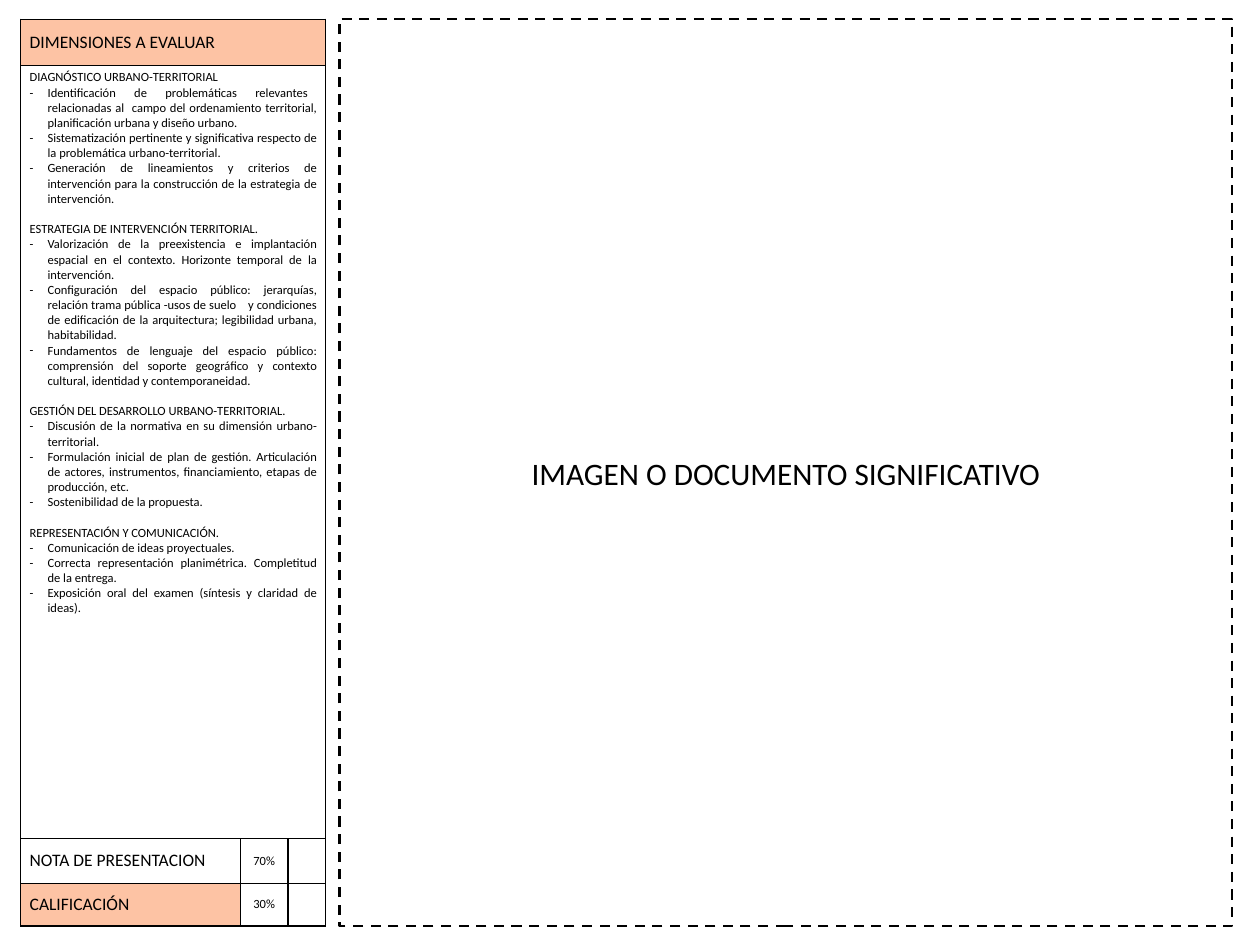
from lxml import etree
from pptx import Presentation
from pptx import util as u
from pptx.dml.color import RGBColor
from pptx.enum import dml, shapes, text
from pptx.oxml.ns import qn

BLACK = RGBColor(0x00, 0x00, 0x00)
WHITE = RGBColor(0xFF, 0xFF, 0xFF)
PEACH = RGBColor(0xFD, 0xC3, 0xA4)
FONT = "Calibri"

WIDTH, HEIGHT = u.Inches(14), u.Inches(10.5)
TOP, TALL = 2, 96
TABLE_LEFT, FRAME_LEFT, FRAME_WIDE = 1.64, 26.93, 70.86
COLUMNS = [17.43, 3.79, 3]
ROWS = [4.95, 81.81, 4.67, 4.57]
VERTICAL_RULES = [1, 0.5, 1, 1]
HORIZONTAL_RULES = [0.5, 1, 1, 0.5, 1]
INDENT = u.Inches(0.2)

DIMENSIONS = {
    "DIAGNÓSTICO URBANO-TERRITORIAL": [
        "Identificación  de  problemáticas  relevantes  relacionadas al  campo del ordenamiento territorial, planificación urbana y diseño urbano.",
        "Sistematización pertinente y significativa respecto de la problemática urbano-territorial.",
        "Generación de lineamientos y criterios de intervención para la construcción de la estrategia de intervención.",
    ],
    "ESTRATEGIA DE INTERVENCIÓN TERRITORIAL.": [
        "Valorización de la preexistencia e implantación espacial en el contexto. Horizonte temporal de la intervención.",
        "Configuración del espacio público: jerarquías, relación trama pública -usos de suelo    y condiciones de edificación de la arquitectura; legibilidad urbana, habitabilidad.",
        "Fundamentos de lenguaje del espacio público: comprensión del soporte geográfico y contexto cultural, identidad y contemporaneidad.",
    ],
    "GESTIÓN DEL DESARROLLO URBANO-TERRITORIAL.": [
        "Discusión de la normativa en su dimensión urbano-territorial.",
        "Formulación inicial de plan de gestión. Articulación de actores, instrumentos, financiamiento, etapas de producción, etc.",
        "Sostenibilidad de la propuesta.",
    ],
    "REPRESENTACIÓN Y COMUNICACIÓN.": [
        "Comunicación de ideas proyectuales.",
        "Correcta representación planimétrica. Completitud de la entrega.",
        "Exposición oral del examen (síntesis y claridad de ideas).",
    ],
}
GRADES = [("NOTA DE PRESENTACION", "70%", WHITE), ("CALIFICACIÓN", "30%", PEACH)]


def across(percent):
    return round(WIDTH * percent / 100)


def down(percent):
    return round(HEIGHT * percent / 100)


def assign(target, values):
    for name, value in values.items():
        setattr(target, name, value)


def write(para, words, size, align=text.PP_ALIGN.LEFT):
    para.alignment = align
    span = para.add_run()
    span.text = words
    assign(span.font, {"name": FONT, "size": u.Pt(size), "bold": False})
    span.font.color.rgb = BLACK


def add_dash(para):
    properties = para._p.get_or_add_pPr()
    properties.set("marL", str(INDENT))
    properties.set("indent", str(-INDENT))
    etree.SubElement(properties, qn("a:buFont"), typeface=FONT)
    etree.SubElement(properties, qn("a:buChar"), char="-")


def draw_borders(cell, widths):
    properties = cell._tc.get_or_add_tcPr()
    for side, width in widths.items():
        line = etree.SubElement(properties, qn(f"a:ln{side}"), w=str(u.Pt(width)))
        fill = etree.SubElement(line, qn("a:solidFill"))
        etree.SubElement(fill, qn("a:srgbClr"), val=str(BLACK))


def paint(cell, color):
    cell.fill.solid()
    cell.fill.fore_color.rgb = color


def fill_label(cell, words, size, align=text.PP_ALIGN.LEFT):
    cell.vertical_anchor = text.MSO_ANCHOR.MIDDLE
    write(cell.text_frame.paragraphs[0], words, size, align)


def fill_dimensions(cell):
    box = cell.text_frame
    for index, (heading, items) in enumerate(DIMENSIONS.items()):
        para = box.add_paragraph() if index else box.paragraphs[0]
        para.space_before = u.Pt(12.2 if index else 0)
        write(para, heading, 10)
        for item in items:
            para = box.add_paragraph()
            write(para, item, 10, text.PP_ALIGN.JUSTIFY)
            add_dash(para)


def add_grid(page):
    table = page.shapes.add_table(
        len(ROWS), len(COLUMNS), across(TABLE_LEFT), down(TOP),
        across(sum(COLUMNS)), down(TALL)).table
    assign(table, {"first_row": False, "horz_banding": False})
    for column, share in zip(table.columns, COLUMNS):
        column.width = across(share)
    for row, share in zip(table.rows, ROWS):
        row.height = down(share)
    for row in range(2):
        table.cell(row, 0).merge(table.cell(row, len(COLUMNS) - 1))
    for row in range(len(ROWS)):
        for column in range(len(COLUMNS)):
            cell = table.cell(row, column)
            end = column + (cell.span_width if cell.is_merge_origin else 1)
            draw_borders(cell, {
                "L": VERTICAL_RULES[column], "R": VERTICAL_RULES[end],
                "T": HORIZONTAL_RULES[row], "B": HORIZONTAL_RULES[row + 1]})
            cell.fill.background()
    return table


def add_evaluation(page):
    table = add_grid(page)
    header = table.cell(0, 0)
    fill_label(header, "DIMENSIONES A EVALUAR", 14)
    paint(header, PEACH)
    fill_dimensions(table.cell(1, 0))
    for row, (label, weight, color) in enumerate(GRADES, 2):
        fill_label(table.cell(row, 0), label, 14)
        paint(table.cell(row, 0), color)
        fill_label(table.cell(row, 1), weight, 10, text.PP_ALIGN.CENTER)


def add_image_frame(page):
    frame = page.shapes.add_shape(
        shapes.MSO_SHAPE.RECTANGLE, across(FRAME_LEFT), down(TOP),
        across(FRAME_WIDE), down(TALL))
    frame.shadow.inherit = False
    frame.fill.background()
    frame.line.color.rgb = BLACK
    assign(frame.line, {"width": u.Pt(2), "dash_style": dml.MSO_LINE.DASH})
    box = frame.text_frame
    assign(box, {"word_wrap": True, "vertical_anchor": text.MSO_ANCHOR.MIDDLE})
    write(box.paragraphs[0], "IMAGEN O DOCUMENTO SIGNIFICATIVO", 25,
          text.PP_ALIGN.CENTER)


def main():
    deck = Presentation()
    assign(deck, {"slide_width": WIDTH, "slide_height": HEIGHT})
    page = deck.slides.add_slide(deck.slide_layouts[6])
    add_image_frame(page)
    add_evaluation(page)
    deck.save("out.pptx")


if __name__ == "__main__":
    main()
